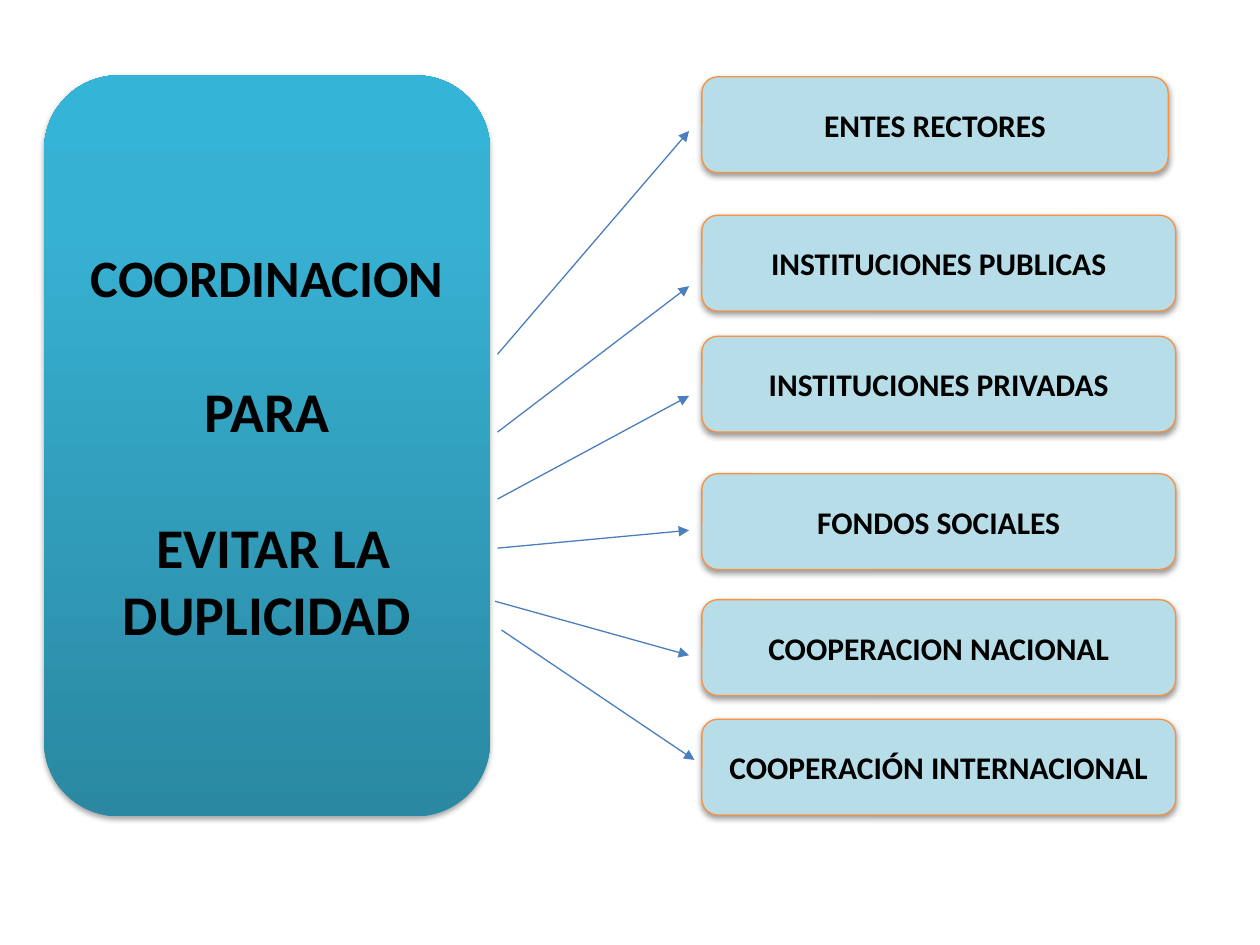
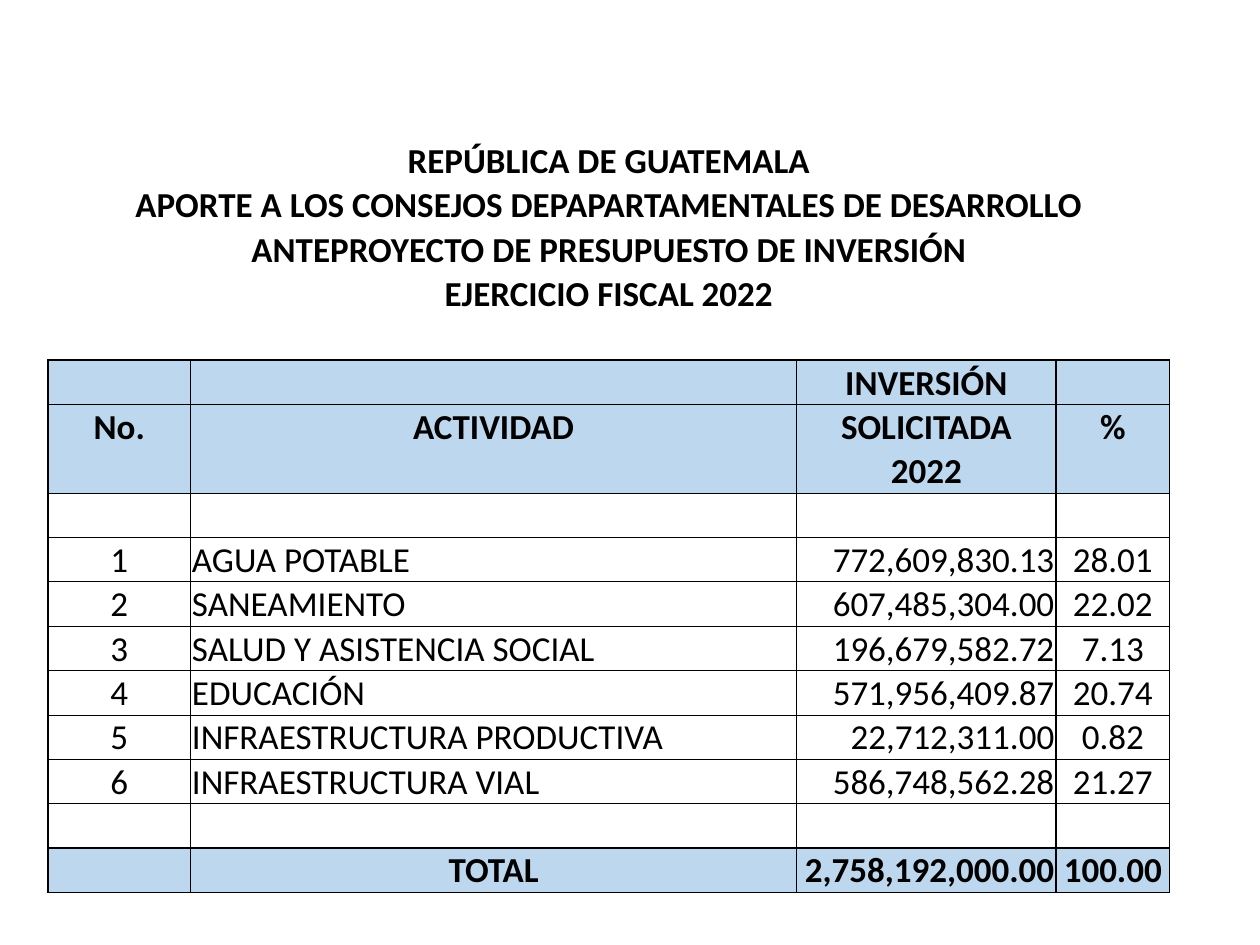
from copy import deepcopy

from lxml.etree import SubElement
from pptx import Presentation
from pptx.dml.color import RGBColor
from pptx.enum.shapes import MSO_CONNECTOR as CONN, MSO_SHAPE as SHAPE
from pptx.enum.text import MSO_ANCHOR as ANCHOR, PP_ALIGN as ALIGN
from pptx.oxml.ns import qn
from pptx.util import Cm, Pt

# Shared style
FONT = "Calibri"
BLACK, WHITE = "000000", "FFFFFF"
BOX_FILL, BOX_LINE, ARROW = "B7DEE8", "F69240", "4B7EBC"
GOAL_STOPS = [(0, "2A88A2"), (0.8, "37B1D2"), (1, "34B4D6")]
BAND = "BDD7EE"

# Slide 1: goal, and the bodies it coordinates (name, top, width)
GOAL = [("COORDINACION", 30), ("PARA", 32), (" EVITAR LA DUPLICIDAD", 32)]
BODIES = [
    ("ENTES RECTORES", 1.55, 9.4),
    ("INSTITUCIONES PUBLICAS", 4.34, 9.55),
    ("INSTITUCIONES PRIVADAS", 6.78, 9.55),
    ("FONDOS SOCIALES", 9.55, 9.55),
    ("COOPERACION NACIONAL", 12.09, 9.55),
    ("COOPERACIÓN INTERNACIONAL", 14.5, 9.55),
]
ARROWS = [  # x1, y1, x2, y2
    (10.03, 7.14, 13.89, 2.64),
    (10.03, 8.71, 13.89, 5.77),
    (10.03, 10.06, 13.89, 7.98),
    (10.03, 11.05, 13.89, 10.69),
    (9.98, 12.12, 13.89, 13.21),
    (10.11, 12.7, 14, 15.32),
]

# Slide 2: budget table
TITLES = [
    "REPÚBLICA DE GUATEMALA",
    "APORTE A LOS CONSEJOS DEPAPARTAMENTALES DE DESARROLLO",
    "ANTEPROYECTO DE PRESUPUESTO DE INVERSIÓN",
    "EJERCICIO FISCAL 2022",
]
HEADER = [
    ("", "", "INVERSIÓN", ""),
    ("No.", "ACTIVIDAD", "SOLICITADA", "%"),
    ("", "", "2022", ""),
]
ACTIVITIES = [
    ("1", "AGUA POTABLE", "772,609,830.13", "28.01"),
    ("2", "SANEAMIENTO", "607,485,304.00", "22.02"),
    ("3", "SALUD Y ASISTENCIA SOCIAL", "196,679,582.72", "7.13"),
    ("4", "EDUCACIÓN", "571,956,409.87", "20.74"),
    ("5", "INFRAESTRUCTURA PRODUCTIVA", "22,712,311.00", "0.82"),
    ("6", "INFRAESTRUCTURA VIAL", "586,748,562.28", "21.27"),
]
TOTAL = ("", "TOTAL", "2,758,192,000.00", "100.00")
BLANK = ("",) * 4
COL_WIDTHS = [2.87, 12.22, 5.23, 2.29]
ROW_HEIGHT = 0.89
BODY_ALIGN = [ALIGN.CENTER, ALIGN.LEFT, ALIGN.RIGHT, ALIGN.CENTER]
TOTAL_ALIGN = [ALIGN.CENTER, ALIGN.CENTER, ALIGN.RIGHT, ALIGN.CENTER]
CENTERED = [ALIGN.CENTER] * 4
NO_STYLE = "{2D5ABB26-0587-4C30-8999-92F81FD0307C}"


def rgb(color):
    return RGBColor.from_string(color)


def add_run(p, text, size, bold=True, align=ALIGN.CENTER):
    p.alignment = align
    r = p.add_run()
    r.text = text
    r.font.name, r.font.size, r.font.bold = FONT, Pt(size), bold
    r.font.color.rgb = rgb(BLACK)


def add_round_box(slide, left, top, width, height, shadow_alpha):
    s = slide.shapes.add_shape(SHAPE.ROUNDED_RECTANGLE,
                               Cm(left), Cm(top), Cm(width), Cm(height))
    s.shadow.inherit = False
    effects = s._element.spPr.find(qn("a:effectLst"))
    shadow = SubElement(effects, qn("a:outerShdw"), blurRad="40000",
                        dist="21000", dir="5400000", rotWithShape="0")
    color = SubElement(shadow, qn("a:srgbClr"), val=BLACK)
    SubElement(color, qn("a:alpha"), val=str(shadow_alpha * 1000))
    s.text_frame.word_wrap = True
    s.text_frame.vertical_anchor = ANCHOR.MIDDLE
    return s


def add_body(slide, name, top, width):
    s = add_round_box(slide, 14.15, top, width, 1.93, 38)
    s.fill.solid()
    s.fill.fore_color.rgb = rgb(BOX_FILL)
    s.line.color.rgb = rgb(BOX_LINE)
    s.line.width = Pt(0.75)
    add_run(s.text_frame.paragraphs[0], name, 18)


def add_goal(slide):
    s = add_round_box(slide, 0.89, 1.52, 8.99, 14.94, 35)
    s.line.fill.background()
    # Three-stop gradient, from the bottom up
    s.fill.gradient()
    s.fill.gradient_angle = 90
    stops = s._element.spPr.find(qn("a:gradFill")).find(qn("a:gsLst"))
    stops.append(deepcopy(stops[-1]))
    for stop, (position, color) in zip(s.fill.gradient_stops, GOAL_STOPS):
        stop.position = position
        stop.color.rgb = rgb(color)
    tf = s.text_frame
    for i, (text, size) in enumerate(GOAL):
        p = tf.add_paragraph() if i else tf.paragraphs[0]
        if i:
            p.space_before = Pt(39)
        add_run(p, text, size)


def add_arrow(slide, *ends):
    s = slide.shapes.add_connector(CONN.STRAIGHT, *map(Cm, ends))
    s.line.color.rgb = rgb(ARROW)
    s.line.width = Pt(0.75)
    SubElement(s.line._get_or_add_ln(), qn("a:tailEnd"), type="triangle")
    SubElement(s._element.spPr, qn("a:effectLst"))


def set_borders(cell, **widths):
    """Widths in points, keyed by side: L, R, T, B."""
    tc_pr = cell._tc.get_or_add_tcPr()
    for side in "LRTB":
        if side in widths:
            ln = SubElement(tc_pr, qn("a:ln" + side), w=str(Pt(widths[side])))
            fill = SubElement(ln, qn("a:solidFill"))
            SubElement(fill, qn("a:srgbClr"), val=BLACK)


def fill_cell(cell, text, align, bold, anchor, color=None, **borders):
    cell.margin_left = cell.margin_right = cell.margin_top = Cm(0.03)
    cell.margin_bottom = 0
    cell.vertical_anchor = anchor
    set_borders(cell, **borders)
    if color:
        cell.fill.solid()
        cell.fill.fore_color.rgb = rgb(color)
    else:
        cell.fill.background()
    if text:
        add_run(cell.text_frame.paragraphs[0], text, 20, bold, align)


def add_budget(slide):
    sides = {"L": 1, "R": 1}
    # Row groups: texts, alignments, bold, anchor, fill, borders
    rows = [((t, "", "", ""), CENTERED, True, ANCHOR.BOTTOM, None, {})
            for t in TITLES]
    rows.append((BLANK, CENTERED, True, ANCHOR.BOTTOM, None, {"B": 1}))
    for texts, edge in zip(HEADER, ({"T": 1}, {}, {"B": 1})):
        rows.append((texts, CENTERED, True, ANCHOR.MIDDLE, BAND, {**sides, **edge}))
    rows.append((BLANK, BODY_ALIGN, False, ANCHOR.MIDDLE, None,
                 {**sides, "T": 1, "B": 0.5}))
    rows += [(texts, BODY_ALIGN, False, ANCHOR.MIDDLE, WHITE,
              {**sides, "T": 0.5, "B": 0.5}) for texts in ACTIVITIES]
    rows.append((BLANK, BODY_ALIGN, False, ANCHOR.MIDDLE, None,
                 {**sides, "T": 0.5, "B": 1}))
    rows.append((TOTAL, TOTAL_ALIGN, True, ANCHOR.BOTTOM, BAND,
                 {**sides, "T": 1, "B": 1}))

    table = slide.shapes.add_table(
        len(rows), len(COL_WIDTHS), Cm(0.97), Cm(2.79),
        Cm(sum(COL_WIDTHS)), Cm(ROW_HEIGHT * len(rows))).table
    table.first_row = table.horz_banding = False
    table._tbl.tblPr.find(qn("a:tableStyleId")).text = NO_STYLE
    for column, width in zip(table.columns, COL_WIDTHS):
        column.width = Cm(width)
    for i, (texts, aligns, bold, anchor, color, borders) in enumerate(rows):
        table.rows[i].height = Cm(ROW_HEIGHT)
        for j, (text, align) in enumerate(zip(texts, aligns)):
            fill_cell(table.cell(i, j), text, align, bold, anchor, color, **borders)
        if i < len(TITLES):
            table.cell(i, 0).merge(table.cell(i, len(COL_WIDTHS) - 1))


def main():
    prs = Presentation()
    prs.slide_width, prs.slide_height = Cm(25.4), Cm(19.05)
    blank = prs.slide_layouts[6]

    # Slide 1: coordination diagram
    slide = prs.slides.add_slide(blank)
    for body in BODIES:
        add_body(slide, *body)
    add_goal(slide)
    for ends in ARROWS:
        add_arrow(slide, *ends)

    # Slide 2: investment budget
    add_budget(prs.slides.add_slide(blank))
    prs.save("out.pptx")


if __name__ == "__main__":
    main()
